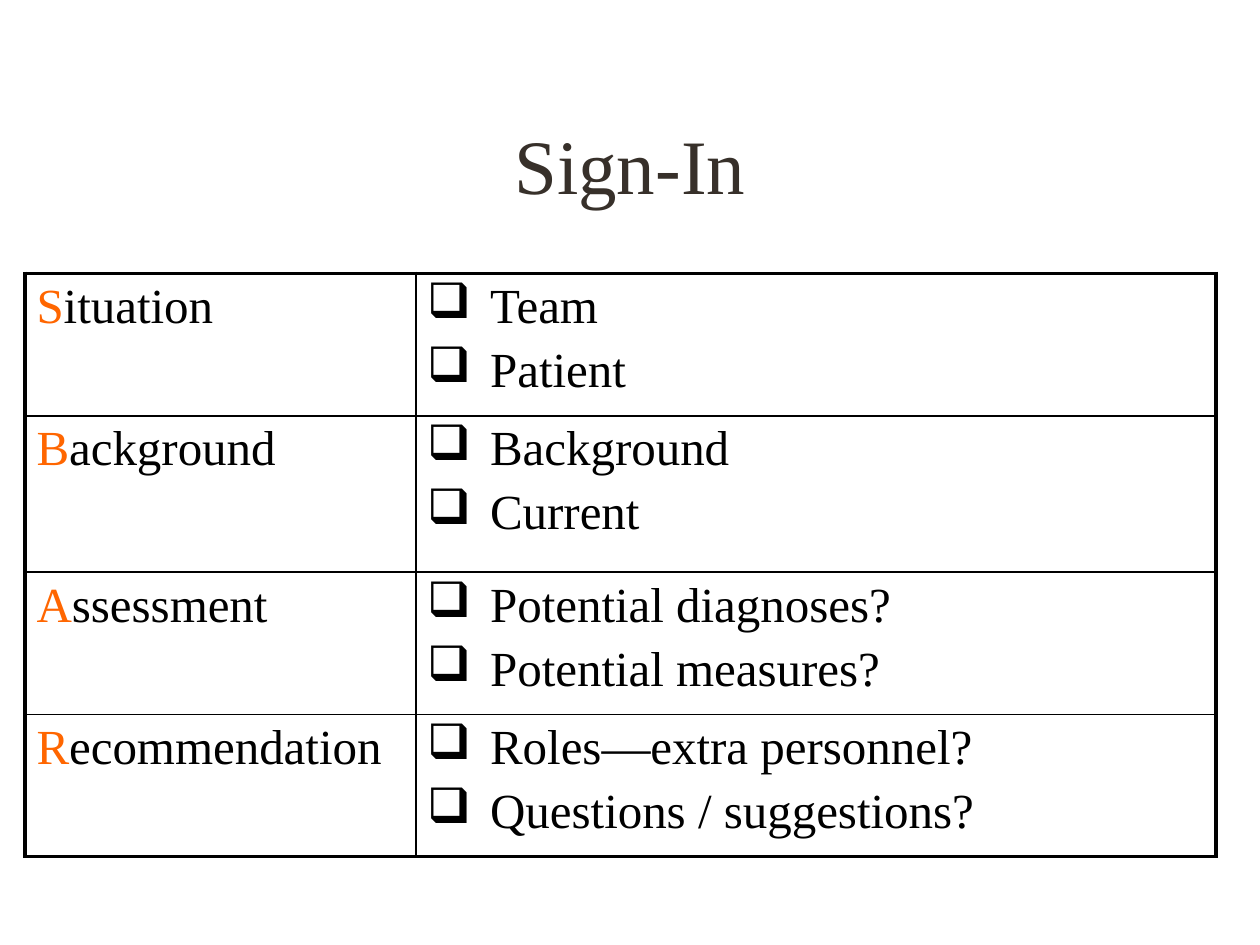
from typing import NamedTuple

from lxml import etree
from pptx import Presentation
from pptx.dml.color import RGBColor
from pptx.enum.text import MSO_ANCHOR, PP_ALIGN
from pptx.oxml.ns import qn
from pptx.util import Inches, Pt

CENTER = PP_ALIGN.CENTER
MIDDLE = MSO_ANCHOR.MIDDLE

FONT = "Times New Roman"
BLACK = RGBColor(0x00, 0x00, 0x00)
ORANGE = RGBColor(0xFF, 0x66, 0x00)
BROWN = RGBColor(0x37, 0x30, 0x2A)

TITLE_SIZE = Pt(44)
BODY_SIZE = Pt(28)
THIN, THICK = Pt(1), Pt(2.25)
BULLET = "❑"
BULLET_INDENT = Inches(0.5)
COLUMN_WIDTHS = (3.1, 6.35)


class Step(NamedTuple):
    name: str
    checks: tuple[str, ...]
    height: float


STEPS = (
    Step("Situation", ("Team", "Patient"), 1.13),
    Step("Background", ("Background", "Current"), 1.24),
    Step("Assessment", ("Potential diagnoses?", "Potential measures?"), 1.13),
    Step("Recommendation", ("Roles—extra personnel?", "Questions / suggestions?"), 1.13),
)


def style_run(run, size: Pt, color: RGBColor) -> None:
    run.font.name = FONT
    run.font.size = size
    run.font.color.rgb = color


def set_spacing(para, bullet: bool = False) -> None:
    """Put a fifth of a line before the paragraph, and a hanging box bullet if asked."""
    properties = para._p.get_or_add_pPr()
    before = etree.SubElement(properties, qn("a:spcBef"))
    etree.SubElement(before, qn("a:spcPct")).set("val", "20000")
    if bullet:
        properties.set("marL", str(BULLET_INDENT))
        properties.set("indent", str(-BULLET_INDENT))
        etree.SubElement(properties, qn("a:buChar")).set("char", BULLET)


def set_borders(cell, row: int, column: int) -> None:
    """Draw thick lines on the outside of the table and thin ones inside."""
    outer_sides = {
        "L": column == 0,
        "R": column == len(COLUMN_WIDTHS) - 1,
        "T": row == 0,
        "B": row == len(STEPS) - 1,
    }
    properties = cell._tc.get_or_add_tcPr()
    for side, is_outer in outer_sides.items():
        line = etree.SubElement(properties, qn(f"a:ln{side}"))
        line.set("w", str(THICK if is_outer else THIN))
        fill = etree.SubElement(line, qn("a:solidFill"))
        etree.SubElement(fill, qn("a:srgbClr")).set("val", str(BLACK))


def write_name(cell, name: str) -> None:
    para = cell.text_frame.paragraphs[0]
    set_spacing(para)
    for text, color in ((name[0], ORANGE), (name[1:], BLACK)):
        run = para.add_run()
        run.text = text
        style_run(run, BODY_SIZE, color)


def write_checks(cell, checks: tuple[str, ...]) -> None:
    cell.text_frame.text = "\n".join(checks)
    for para in cell.text_frame.paragraphs:
        set_spacing(para, bullet=True)
        style_run(para.runs[0], BODY_SIZE, BLACK)


def add_title(page, text: str) -> None:
    box = page.shapes.add_textbox(Inches(0.75), Inches(0.67), Inches(8.5), Inches(1.25))
    frame = box.text_frame
    frame.word_wrap = True
    frame.vertical_anchor = MIDDLE
    frame.text = text
    para = frame.paragraphs[0]
    para.alignment = CENTER
    style_run(para.runs[0], TITLE_SIZE, BROWN)


def add_step_table(page) -> None:
    height = sum(step.height for step in STEPS)
    table = page.shapes.add_table(
        len(STEPS), len(COLUMN_WIDTHS), Inches(0.2), Inches(2.17),
        Inches(sum(COLUMN_WIDTHS)), Inches(height),
    ).table
    table.first_row = False
    table.horz_banding = False
    for column, width in zip(table.columns, COLUMN_WIDTHS):
        column.width = Inches(width)
    for row, step in enumerate(STEPS):
        table.rows[row].height = Inches(step.height)
        write_name(table.cell(row, 0), step.name)
        write_checks(table.cell(row, 1), step.checks)
        for column in range(len(COLUMN_WIDTHS)):
            cell = table.cell(row, column)
            cell.margin_left = cell.margin_right = Inches(0.09)
            cell.margin_top = cell.margin_bottom = Inches(0.05)
            set_borders(cell, row, column)
            cell.fill.background()


def main() -> None:
    deck = Presentation()
    deck.slide_width, deck.slide_height = Inches(10), Inches(7.5)
    page = deck.slides.add_slide(deck.slide_layouts[6])
    add_title(page, "Sign-In")
    add_step_table(page)
    deck.save("out.pptx")


if __name__ == "__main__":
    main()
